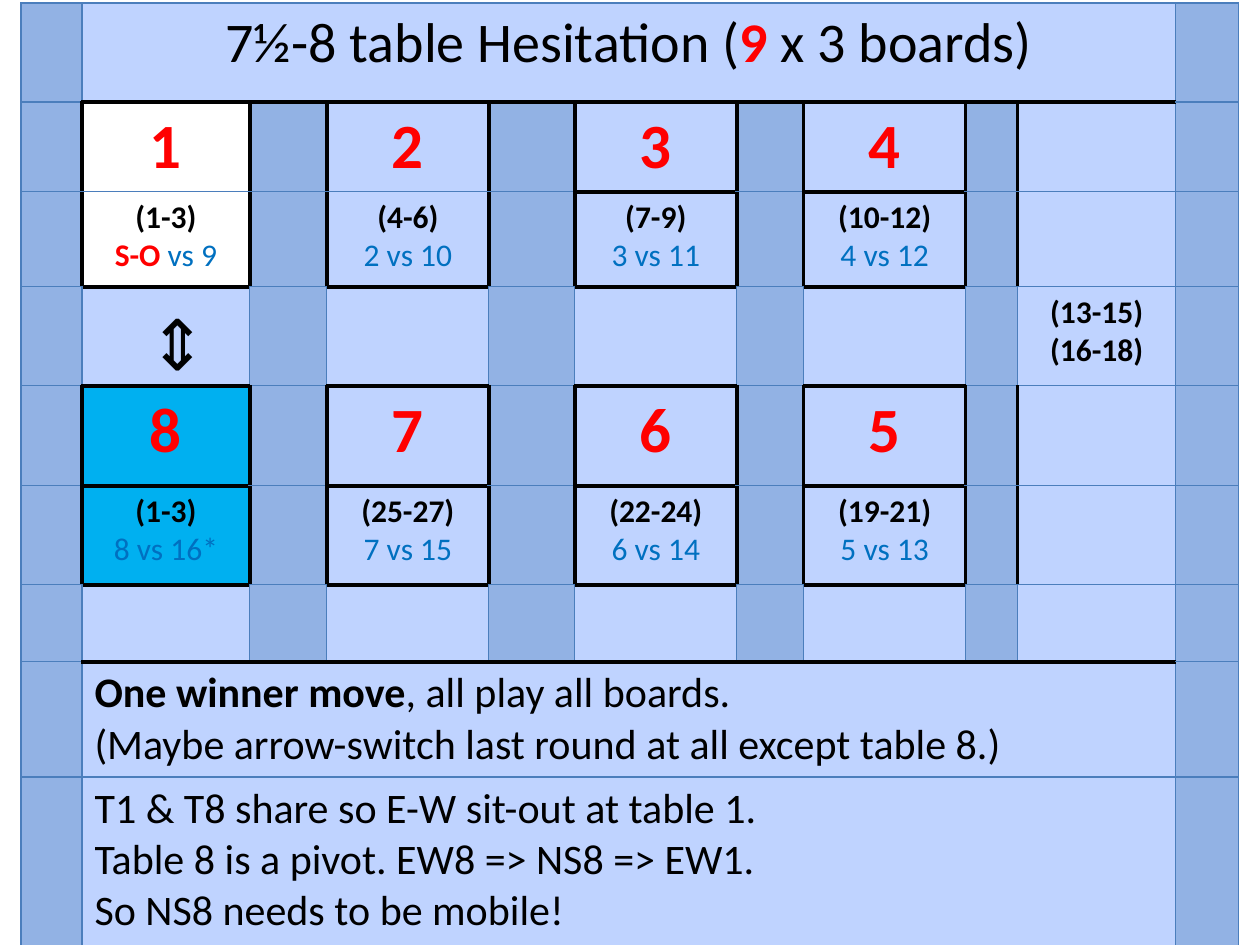
from lxml import etree
from pptx import Presentation
from pptx.dml.color import RGBColor
from pptx.enum.text import PP_ALIGN
from pptx.oxml.ns import qn
from pptx.util import Emu, Pt

CENTER, LEFT = PP_ALIGN.CENTER, PP_ALIGN.LEFT
PX = 914400 // 126
BLACK = RGBColor(0x00, 0x00, 0x00)
WHITE = RGBColor(0xFF, 0xFF, 0xFF)
RED = RGBColor(0xFF, 0x00, 0x00)
BLUE = RGBColor(0x00, 0x70, 0xC0)
CYAN = RGBColor(0x00, 0xB0, 0xF0)
PALE = RGBColor(0xBF, 0xD3, 0xFF)
GAP = RGBColor(0x92, 0xB2, 0xE4)
GRID = RGBColor(0x4B, 0x7E, 0xBC)


def write(text_frame, paragraphs, align, font="Calibri"):
    """Each paragraph is a list of (text, size, color, bold) runs; \n breaks a line."""
    for index, parts in enumerate(paragraphs):
        paragraph = text_frame.paragraphs[0] if index == 0 else text_frame.add_paragraph()
        paragraph.alignment = align
        for text, size, color, bold in parts:
            for number, line in enumerate(text.split("\n")):
                if number:
                    paragraph.add_line_break()
                run = paragraph.add_run()
                run.text = line
                run.font.name, run.font.size, run.font.bold = font, Pt(size), bold
                run.font.color.rgb = color


def add_border(cell, tag, color, width):
    properties = cell._tc.get_or_add_tcPr()
    line = etree.Element(qn("a:" + tag), w=str(Pt(width)))
    fill = etree.SubElement(line, qn("a:solidFill"))
    etree.SubElement(fill, qn("a:srgbClr"), val=str(color))
    # Borders come before the cell fill
    position = len(properties.findall(qn("a:lnL")) + properties.findall(qn("a:lnR"))
                   + properties.findall(qn("a:lnT")))
    properties.insert(position, line)


presentation = Presentation()
presentation.slide_width, presentation.slide_height = Emu(1260 * PX), Emu(945 * PX)
slide = presentation.slides.add_slide(presentation.slide_layouts[6])

# Table grid
column_widths = [61, 168, 77, 162, 86, 162, 67, 162, 52, 158, 63]
row_heights = [99, 90, 95, 99, 100, 99, 77, 115, 174]
rows, columns = len(row_heights), len(column_widths)
table = slide.shapes.add_table(
    rows, columns, Emu(21 * PX), Emu(3 * PX),
    Emu(sum(column_widths) * PX), Emu(sum(row_heights) * PX)).table
table.first_row = table.horz_banding = False
for column, width in zip(table.columns, column_widths):
    column.width = Emu(width * PX)
for row, height in zip(table.rows, row_heights):
    row.height = Emu(height * PX)

# Full-width rows and fills
wide_rows = (0, 7, 8)
for row in wide_rows:
    table.cell(row, 1).merge(table.cell(row, 9))
for row in range(rows):
    for column in range(columns):
        fill = table.cell(row, column).fill
        fill.solid()
        gap = column in (0, 10) or (column % 2 == 0 and row not in wide_rows)
        fill.fore_color.rgb = GAP if gap else PALE

# Grid lines: (row, column) of the cell below or to the right -> width in black
horizontal = {(row, column): 2.25 for row in (1, 7) for column in range(1, 10)}
vertical = {(row, 9): 2.25 for row in (1, 2, 4, 5)}

# Playing tables: number, boards, pairs
playing_tables = [
    (1, 1, "1", "(1-3)", None), (1, 3, "2", "(4-6)", "2 vs 10"),
    (1, 5, "3", "(7-9)", "3 vs 11"), (1, 7, "4", "(10-12)", "4 vs 12"),
    (4, 1, "8", "(1-3)", "8 vs 16*"), (4, 3, "7", "(25-27)", "7 vs 15"),
    (4, 5, "6", "(22-24)", "6 vs 14"), (4, 7, "5", "(19-21)", "5 vs 13"),
]
for row, column, number, boards, pairs in playing_tables:
    weight = 3 if number == "2" else 2.25
    pair_runs = ([(pairs, 18, BLUE, False)] if pairs
                 else [("S-O", 18, RED, True), (" vs 9", 18, BLUE, False)])
    write(table.cell(row, column).text_frame, [[(number, 36, RED, True)]], CENTER)
    write(table.cell(row + 1, column).text_frame,
          [[(boards, 18, BLACK, True)], pair_runs], CENTER)
    horizontal[row, column] = horizontal[row + 2, column] = weight
    if number not in "12":
        horizontal[row + 1, column] = weight
    for line in (row, row + 1):
        vertical[line, column] = vertical[line, column + 1] = weight
        if number in "18":
            table.cell(line, column).fill.fore_color.rgb = WHITE if number == "1" else CYAN

# Borders
for row in range(rows):
    for column in range(columns):
        merged = row in wide_rows
        for tag, edges, key in (("lnL", vertical, (row, column)),
                                ("lnR", vertical, (row, column + 1)),
                                ("lnT", horizontal, (row, column)),
                                ("lnB", horizontal, (row + 1, column))):
            if merged and edges is vertical and 2 <= key[1] <= 9:
                continue
            color = BLACK if key in edges else GRID
            add_border(table.cell(row, column), tag, color, edges.get(key, 0.75))

# Title, relay boards and notes
write(table.cell(0, 1).text_frame,
      [[("7½-8 table Hesitation (", 32, BLACK, False), ("9", 32, RED, True),
        (" x 3 boards)", 32, BLACK, False)]], CENTER)
write(table.cell(3, 9).text_frame,
      [[(boards, 18, BLACK, True)] for boards in ("(13-15)", "(16-18)")], CENTER)
write(table.cell(7, 1).text_frame,
      [[("One winner move", 24, BLACK, True),
        (", all play all boards. \n(Maybe arrow-switch last round at all except table 8.)",
         24, BLACK, False)]], LEFT)
write(table.cell(8, 1).text_frame,
      [[("T1 & T8 share so E-W sit-out at table 1.", 24, BLACK, False)],
       [("Table 8 is a pivot. EW8 => NS8 => EW1. \nSo NS8 needs to be mobile!",
         24, BLACK, False)]], LEFT)

# Sharing arrow between tables 1 and 8
arrow = slide.shapes.add_textbox(Emu(136 * PX), Emu(294 * PX), Emu(73 * PX), Emu(136 * PX))
arrow.text_frame.word_wrap = True
write(arrow.text_frame, [[("⇕", 40, BLACK, False)]], CENTER, "Cabin")

presentation.save("out.pptx")
